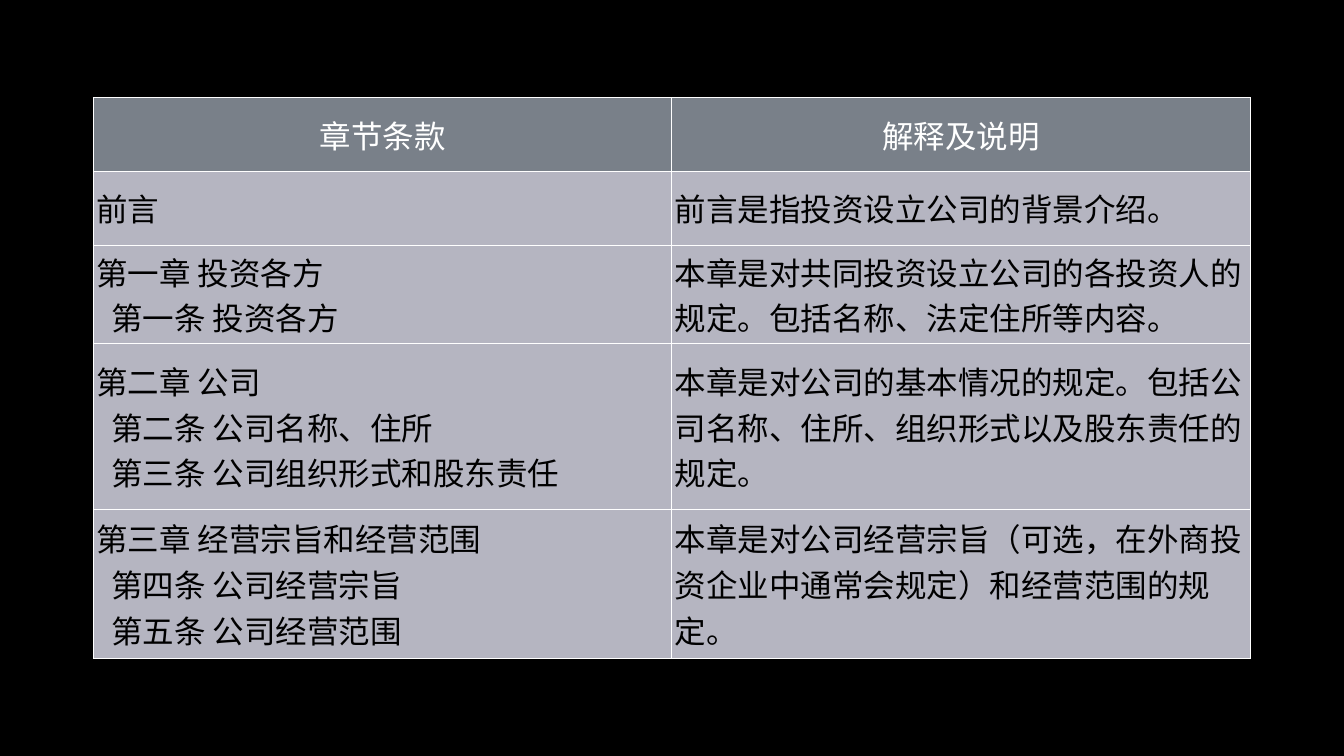
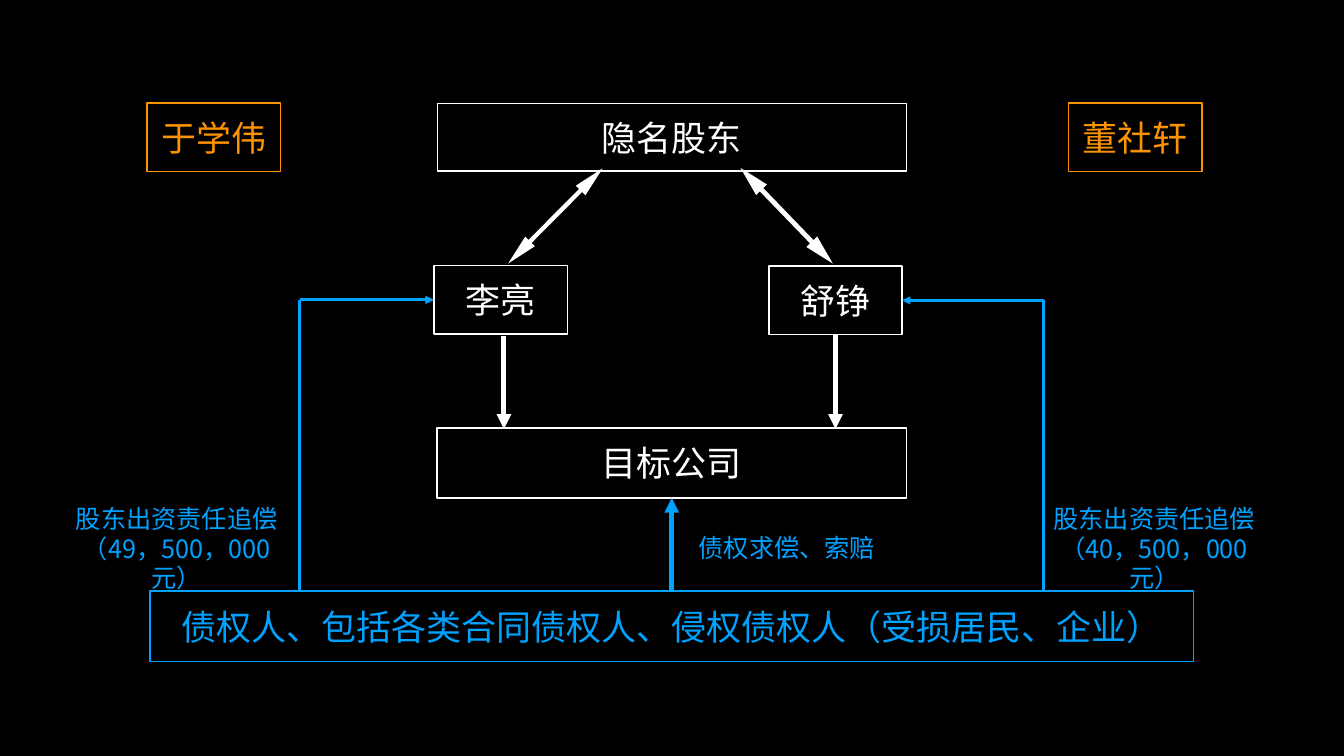
"""Builds two slides: a table of company charter clauses and a diagram of shareholder liability."""
from dataclasses import dataclass

from lxml import etree
from pptx import Presentation
from pptx import util as u
from pptx.dml.color import RGBColor
from pptx.enum import shapes, text
from pptx.oxml import ns


@dataclass(frozen=True)
class Theme:
    black: RGBColor = RGBColor.from_string("000000")
    white: RGBColor = RGBColor.from_string("FFFFFF")
    blue: RGBColor = RGBColor.from_string("00A2FF")
    orange: RGBColor = RGBColor.from_string("FE9301")
    header: RGBColor = RGBColor.from_string("798089")
    body: RGBColor = RGBColor.from_string("B5B5C1")
    font: str = "Noto Sans CJK SC"
    box_size: int = 50
    table_size: int = 45
    note_size: int = 36


theme = Theme()
PX = 9144
CENTER, LEFT = text.PP_ALIGN.CENTER, text.PP_ALIGN.LEFT


def write(frame, content, size, color, align=CENTER):
    frame.text = content
    for para in frame.paragraphs:
        para.alignment = align
        para._p.get_or_add_pPr().set("hangingPunct", "0")
        for span in para.runs:
            span.font.size = u.Pt(size)
            span.font.bold = False
            span.font.name = theme.font
            span.font.color.rgb = color
            east_asian = etree.SubElement(span.font._element, ns.qn("a:ea"))
            east_asian.set("typeface", theme.font)


def set_frame(frame, wrap=True):
    frame.word_wrap = wrap
    frame.vertical_anchor = text.MSO_ANCHOR.MIDDLE
    frame.margin_left = frame.margin_right = 8 * PX
    frame.margin_top = frame.margin_bottom = 8 * PX


deck = Presentation()
deck.slide_width, deck.slide_height = 2667 * PX, 1500 * PX
pages = [deck.slides.add_slide(deck.slide_layouts[6]) for _ in range(2)]
for page in pages:
    page.background.fill.solid()
    page.background.fill.fore_color.rgb = theme.black
clause_page, liability_page = pages

clauses = [
    (146, "章节条款", "解释及说明"),
    (146, "前言", "前言是指投资设立公司的背景介绍。"),
    (196, "第一章 投资各方\n第一条 投资各方",
     "本章是对共同投资设立公司的各投资人的规定。包括名称、法定住所等内容。"),
    (328, "第二章 公司\n第二条 公司名称、住所\n第三条 公司组织形式和股东责任",
     "本章是对公司的基本情况的规定。包括公司名称、住所、组织形式以及股东责任的规定。"),
    (297, "第三章 经营宗旨和经营范围\n第四条 公司经营宗旨\n第五条 公司经营范围",
     "本章是对公司经营宗旨（可选，在外商投资企业中通常会规定）和经营范围的规定。"),
]
table = clause_page.shapes.add_table(
    len(clauses), 2, 185 * PX, 194 * PX, 2296 * PX, 1113 * PX).table
table.horz_banding = False
for row_index, (height, *cell_texts) in enumerate(clauses):
    table.rows[row_index].height = height * PX
    is_header = row_index == 0
    for column_index, content in enumerate(cell_texts):
        cell = table.cell(row_index, column_index)
        cell.vertical_anchor = text.MSO_ANCHOR.MIDDLE
        cell.margin_left = cell.margin_right = 6 * PX
        cell.margin_top = cell.margin_bottom = 6 * PX
        cell.fill.solid()
        cell.fill.fore_color.rgb = theme.header if is_header else theme.body
        write(cell.text_frame, content, theme.table_size,
              theme.white if is_header else theme.black,
              CENTER if is_header else LEFT)
        for para in cell.text_frame.paragraphs[1:]:
            para._p.get_or_add_pPr().set("marL", str(30 * PX))
        properties = cell._tc.get_or_add_tcPr()
        for position, side in enumerate(("lnL", "lnR", "lnT", "lnB")):
            border = etree.Element(ns.qn(f"a:{side}"), w=str(u.Pt(1)))
            fill = etree.SubElement(border, ns.qn("a:solidFill"))
            etree.SubElement(fill, ns.qn("a:srgbClr"), val=str(theme.white))
            properties.insert(position, border)

parties = [
    ("隐名股东", 868, 205, 931, 134, theme.white),
    ("李亮", 861, 527, 265, 136, theme.white),
    ("舒铮", 1526, 528, 264, 136, theme.white),
    ("目标公司", 867, 849, 932, 139, theme.white),
    ("债权人、包括各类合同债权人、侵权债权人（受损居民、企业）",
     298, 1173, 2070, 139, theme.blue),
    ("于学伟", 292, 204, 265, 136, theme.orange),
    ("董社轩", 2120, 204, 265, 136, theme.orange),
]
boxes = []
for name, left, top, width, height, color in parties:
    box = liability_page.shapes.add_shape(
        shapes.MSO_SHAPE.RECTANGLE, left * PX, top * PX, width * PX, height * PX)
    box.shadow.inherit = False
    box.fill.background()
    box.line.color.rgb = color
    box.line.width = u.Pt(2)
    set_frame(box.text_frame)
    write(box.text_frame, name, theme.box_size, color)
    boxes.append(box)
_, left_holder, right_holder, company, creditors, *_ = boxes

for left, top, width, height, angle, head in [
    (969, 415, 266, 27, 314.8, 2.29),
    (1429, 413, 264, 30, 46, 2.01),
]:
    arrow = liability_page.shapes.add_shape(
        shapes.MSO_SHAPE.LEFT_RIGHT_ARROW, left * PX, top * PX, width * PX, height * PX)
    arrow.shadow.inherit = False
    arrow.rotation = angle
    arrow.adjustments[0] = 0.32
    arrow.adjustments[1] = head
    arrow.fill.solid()
    arrow.fill.fore_color.rgb = theme.white
    arrow.line.fill.background()

links = [
    ((1000, 667), (1000, 851), theme.white, 7, True, None, None),
    ((1658, 667), (1658, 851), theme.white, 7, True, (right_holder, 2), None),
    ((1333, 1170), (1333, 992), theme.blue, 7, True, (creditors, 0), (company, 2)),
    ((595, 1173), (595, 595), theme.blue, 4, False, None, None),
    ((2071, 1173), (2071, 596), theme.blue, 4, False, None, None),
    ((595, 595), (861, 595), theme.blue, 4, True, None, (left_holder, 1)),
    ((2071, 596), (1790, 596), theme.blue, 4, True, None, (right_holder, 3)),
]
for (x1, y1), (x2, y2), color, weight, has_head, source, target in links:
    link = liability_page.shapes.add_connector(
        shapes.MSO_CONNECTOR.STRAIGHT, x1 * PX, y1 * PX, x2 * PX, y2 * PX)
    if source:
        link.begin_connect(*source)
    if target:
        link.end_connect(*target)
    link.line.color.rgb = color
    link.line.width = u.Pt(weight)
    if has_head:
        etree.SubElement(link.line._get_or_add_ln(), ns.qn("a:tailEnd"), type="triangle")
    etree.SubElement(link._element.spPr, ns.qn("a:effectLst"))

notes = [
    ("股东出资责任追偿\n（49，500，000元）", 120, 1019, 487, 141, True),
    ("股东出资责任追偿\n（40，500，000元）", 2060, 1019, 487, 141, True),
    ("债权求偿、索赔", 1378, 1056, 367, 66, False),
]
for content, left, top, width, height, wrap in notes:
    note = liability_page.shapes.add_textbox(left * PX, top * PX, width * PX, height * PX)
    set_frame(note.text_frame, wrap)
    if wrap:
        note.text_frame.margin_right = 34 * PX
    write(note.text_frame, content, theme.note_size, theme.blue)
    for para in note.text_frame.paragraphs:
        para.line_spacing = 0.98

deck.save("out.pptx")
